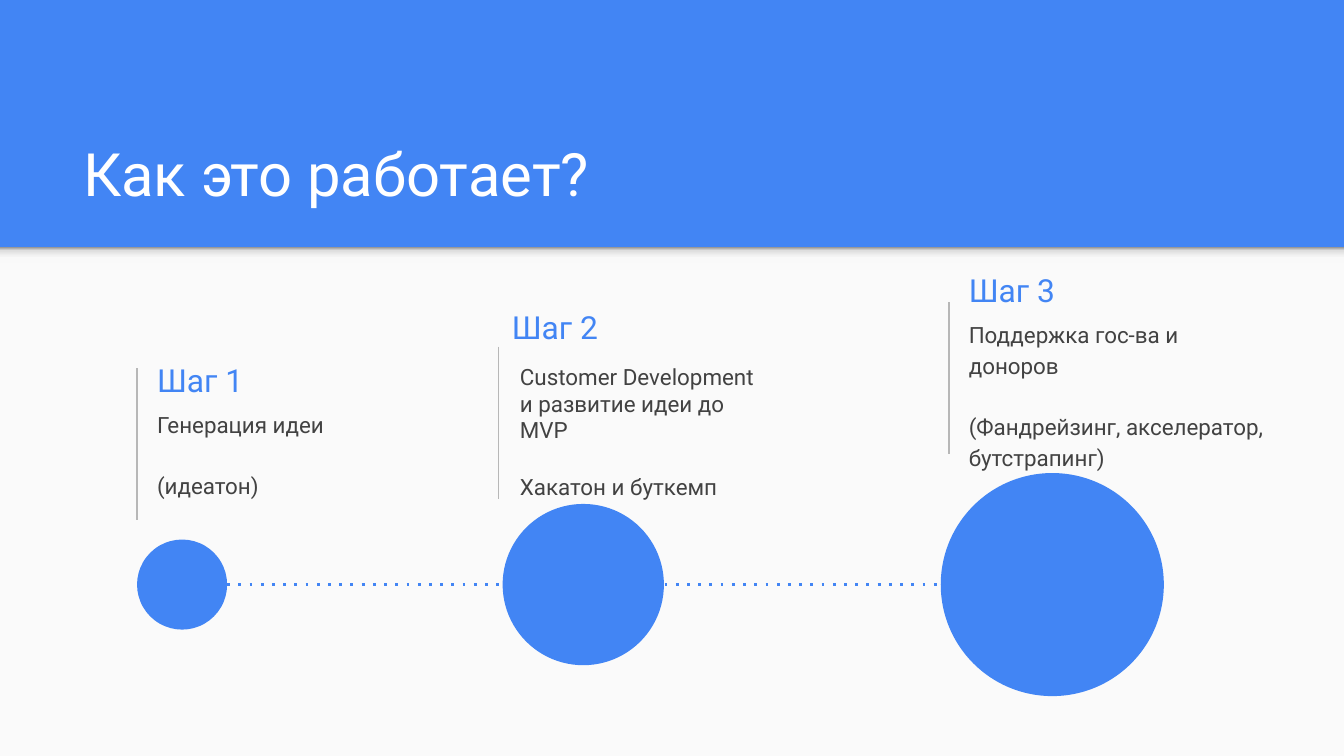
from lxml import etree
from pptx import Presentation
from pptx.dml.color import RGBColor
from pptx.enum import shapes, text
from pptx.oxml import parse_xml
from pptx.oxml.ns import nsdecls, qn
from pptx.util import Inches, Pt

BLUE = RGBColor(0x42, 0x85, 0xF4)
PAPER = RGBColor(0xFA, 0xFA, 0xFA)
WHITE = RGBColor(0xFF, 0xFF, 0xFF)
GRAY = RGBColor(0xB7, 0xB7, 0xB7)
DARK = RGBColor(0x42, 0x42, 0x42)
SHADOW_STOPS = [(0, "F9F9F9"), (36, "F9F9F9"), (80, "DEDEDE"), (100, "999999")]

FONT = "Roboto"
SLIDE_WIDTH = 10
SLIDE_HEIGHT = SLIDE_WIDTH * 9 / 16
HEADER_BOTTOM = 1.84
AXIS_Y = 4.35
RULE_HEIGHT = 1.13

# rule: left, top; heading: left, top; body: left, top, width, height, line spacing
STEPS = [
    {"rule": (1.02, 2.74), "heading": (1.07, 2.61), "body": (1.07, 2.93, 1.98, 0.63, 1.15),
     "texts": ("Шаг 1", ["Генерация идеи", "(идеатон)"])},
    {"rule": (3.71, 2.58), "heading": (3.71, 2.22), "body": (3.77, 2.6, 1.98, 0.63, 1),
     "texts": ("Шаг 2", ["Customer Development и развитие идеи до MVP", "Хакатон и буткемп"])},
    {"rule": (7.06, 2.25), "heading": (7.11, 1.94), "body": (7.11, 2.26, 2.39, 0.74, 1.15),
     "texts": ("Шаг 3", ["Поддержка гос-ва и доноров",
                         "(Фандрейзинг, акселератор, бутстрапинг)"])},
]
CIRCLES = [(1.02, 0.67), (3.74, 1.2), (7, 1.66)]  # left, diameter


def add_text(slide, left, top, width, height, paragraphs, size, color,
             anchor=text.MSO_ANCHOR.TOP, line_spacing=1, gap=0):
    box = slide.shapes.add_textbox(Inches(left), Inches(top), Inches(width), Inches(height))
    frame = box.text_frame
    frame.word_wrap = True
    frame.vertical_anchor = anchor
    frame.margin_left = frame.margin_right = Inches(0.1)
    frame.margin_top = frame.margin_bottom = Inches(0.1)
    for index, content in enumerate(paragraphs):
        paragraph = frame.add_paragraph() if index else frame.paragraphs[0]
        paragraph.line_spacing = line_spacing
        if index:
            paragraph.space_before = paragraph.space_after = Pt(gap)
        run = paragraph.add_run()
        run.text = content
        run.font.name = FONT
        run.font.size = Pt(size)
        run.font.color.rgb = color


def add_filled(slide, kind, left, top, width, height, color):
    shape = slide.shapes.add_shape(kind, Inches(left), Inches(top), Inches(width), Inches(height))
    shape.shadow.inherit = False
    shape.fill.solid()
    shape.fill.fore_color.rgb = color
    shape.line.fill.background()
    return shape


def set_upward_gradient(shape, stops):
    shape.fill.gradient()
    shape.fill.gradient_angle = 90
    stop_list = shape._element.spPr.find(qn("a:gradFill")).find(qn("a:gsLst"))
    for old_stop in list(stop_list):
        stop_list.remove(old_stop)
    for position, color in stops:
        stop_list.append(parse_xml(
            f'<a:gs {nsdecls("a")} pos="{position * 1000}"><a:srgbClr val="{color}"/></a:gs>'))


def add_line(slide, start, end, color, width, dash=None):
    line = slide.shapes.add_connector(
        shapes.MSO_CONNECTOR.STRAIGHT, *(Inches(value) for value in (*start, *end)))
    line.line.color.rgb = color
    line.line.width = Pt(width)
    properties = line._element.spPr
    if dash:
        etree.SubElement(properties.find(qn("a:ln")), qn("a:prstDash"), val=dash)
    etree.SubElement(properties, qn("a:effectLst"))


def add_step(slide, step):
    heading, body = step["texts"]
    left, top = step["rule"]
    add_line(slide, (left, top), (left, top + RULE_HEIGHT), GRAY, 0.75)
    add_text(slide, *step["heading"], 1.98, 0.43, [heading], 17, BLUE,
             anchor=text.MSO_ANCHOR.MIDDLE)
    *position, spacing = step["body"]
    add_text(slide, *position, body, 12, DARK, line_spacing=spacing, gap=16)


def add_timeline(slide):
    first_left, first_diameter = CIRCLES[0]
    add_line(slide, (first_left + first_diameter, AXIS_Y), (CIRCLES[-1][0], AXIS_Y),
             BLUE, 1.5, dash="dot")
    for left, diameter in CIRCLES:
        add_filled(slide, shapes.MSO_SHAPE.OVAL, left, AXIS_Y - diameter / 2,
                   diameter, diameter, BLUE)


def main():
    presentation = Presentation()
    presentation.slide_width = Inches(SLIDE_WIDTH)
    presentation.slide_height = Inches(SLIDE_HEIGHT)
    slide = presentation.slides.add_slide(presentation.slide_layouts[6])

    # Blue header above a light panel with a soft shadow
    slide.background.fill.solid()
    slide.background.fill.fore_color.rgb = BLUE
    rectangle = shapes.MSO_SHAPE.RECTANGLE
    add_filled(slide, rectangle, 0, HEADER_BOTTOM, SLIDE_WIDTH,
               SLIDE_HEIGHT - HEADER_BOTTOM, PAPER)
    shadow = add_filled(slide, rectangle, 0, HEADER_BOTTOM, SLIDE_WIDTH, 0.12, PAPER)
    set_upward_gradient(shadow, SHADOW_STOPS)
    add_text(slide, 0.52, 0.81, 8.99, 0.84, ["Как это работает?"], 32, WHITE,
             anchor=text.MSO_ANCHOR.BOTTOM)

    # Step descriptions
    for step in STEPS:
        add_step(slide, step)

    # Growing circles on a dotted axis
    add_timeline(slide)

    presentation.save("out.pptx")


if __name__ == "__main__":
    main()
